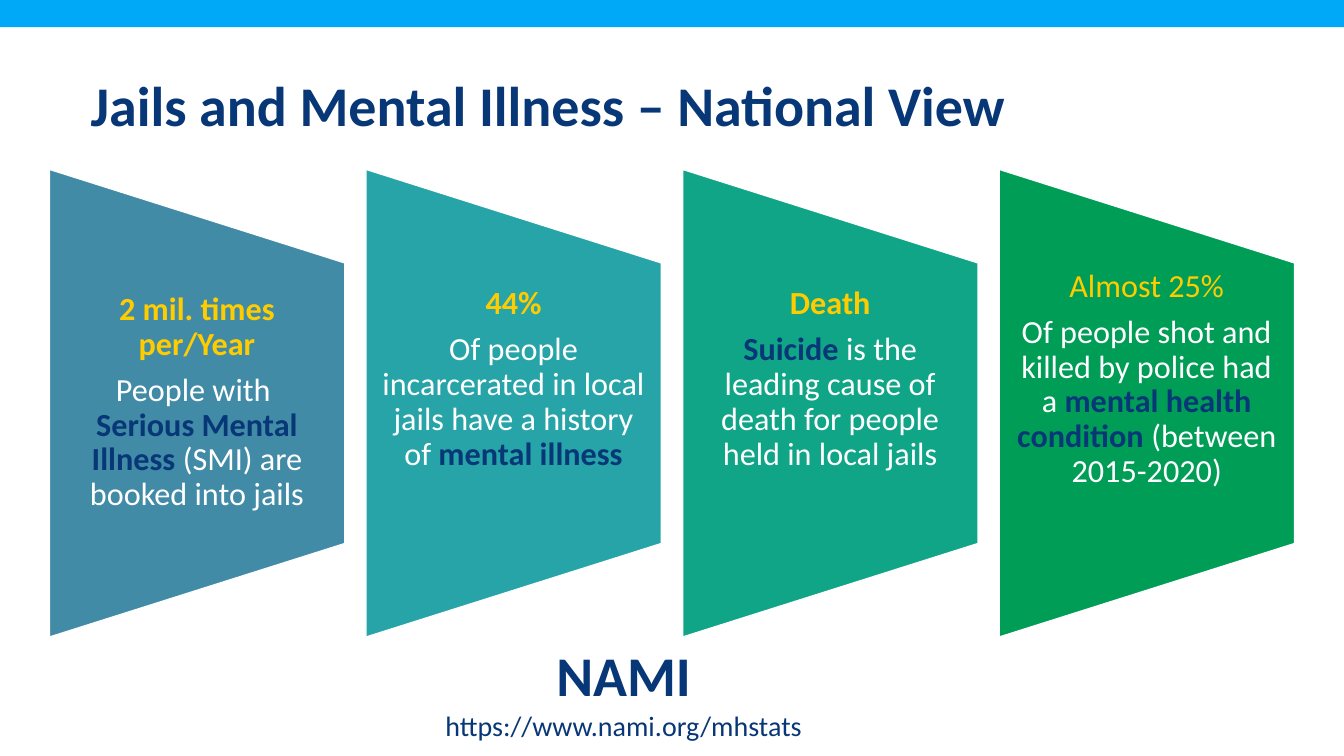
from pptx import Presentation
from pptx.dml.color import RGBColor
from pptx.enum.shapes import MSO_SHAPE as Shape
from pptx.enum.text import MSO_ANCHOR as Anchor, MSO_AUTO_SIZE as AutoSize, PP_ALIGN as Align
from pptx.util import Inches, Pt

NAVY, YELLOW, WHITE, SKY = "073776", "FFCC00", "FFFFFF", "00A9F8"
TITLE = "Jails and Mental Illness – National View"
SOURCE = [("NAMI", 40, True), ("https://www.nami.org/mhstats", 20, False)]

# Each panel: fill, heading, heading is bold, bottom inset, body as (text, emphasised);
# a newline stands for a line break
PANELS = [
    ("418BA7", "2 mil. times per/Year", True, 0,
     [("People with \n", False), ("Serious Mental Illness ", True),
      ("(SMI) are booked into jails", False)]),
    ("27A4A8", "44%", True, 0.46,
     [("Of people incarcerated in local jails have a history of ", False),
      ("mental illness", True)]),
    ("11A587", "Death", True, 0.46,
     [("Suicide", True),
      (" is the leading cause of death for people held in local jails", False)]),
    ("009D57", "Almost 25%", False, 0.46,
     [("Of people shot and killed by police had a ", False),
      ("mental health condition", True), (" (between 2015-2020)", False)]),
]

PANEL_LEFT, PANEL_WIDTH, PANEL_GAP = 0.49, 2.93, 0.21
PANEL_TOP, PANEL_HEIGHT = 1.68, 4.64
TEXT_TOP, TEXT_HEIGHT = 2.6, 2.79


def color(value):
    return RGBColor.from_string(value)


def set_font(font, size, hex_color, bold):
    font.name = "Calibri"
    font.size = Pt(size)
    font.bold = bold
    font.color.rgb = color(hex_color)


def panel_paragraph(paragraph):
    paragraph.alignment = Align.CENTER
    paragraph.line_spacing = 0.9
    paragraph.space_after = Pt(8)
    return paragraph


def add_panel(slide, left, fill, heading, heading_bold, bottom_inset, body):
    # The outline is drawn lying down and turned a quarter to the left
    shift = (PANEL_HEIGHT - PANEL_WIDTH) / 2
    shape = slide.shapes.add_shape(
        Shape.FLOWCHART_MANUAL_OPERATION, Inches(left - shift), Inches(PANEL_TOP + shift),
        Inches(PANEL_HEIGHT), Inches(PANEL_WIDTH))
    shape.rotation = 270
    shape.shadow.inherit = False
    shape.fill.solid()
    shape.fill.fore_color.rgb = color(fill)
    shape.line.color.rgb = color(WHITE)
    shape.line.width = Pt(1)

    # Upright text over the panel
    frame = slide.shapes.add_textbox(Inches(left), Inches(TEXT_TOP), Inches(PANEL_WIDTH),
                                     Inches(TEXT_HEIGHT)).text_frame
    frame.word_wrap = True
    frame.vertical_anchor = Anchor.MIDDLE
    frame.margin_left = frame.margin_right = Inches(0.16)
    frame.margin_top = 0
    frame.margin_bottom = Inches(bottom_inset)

    paragraph = panel_paragraph(frame.paragraphs[0])
    paragraph.text = heading
    set_font(paragraph.font, 23, YELLOW, heading_bold)

    paragraph = panel_paragraph(frame.add_paragraph())
    for text, emphasised in body:
        run = paragraph.add_run()
        run.text = text.rstrip("\n")
        set_font(run.font, 23, NAVY if emphasised else WHITE, emphasised)
        if text.endswith("\n"):
            paragraph.add_line_break()


def main():
    presentation = Presentation()
    presentation.slide_width, presentation.slide_height = Inches(13.33), Inches(7.5)
    slide = presentation.slides.add_slide(presentation.slide_layouts[5])

    # Top band
    band = slide.shapes.add_shape(Shape.RECTANGLE, 0, 0, presentation.slide_width, Inches(0.27))
    band.shadow.inherit = False
    band.fill.solid()
    band.fill.fore_color.rgb = color(SKY)
    band.line.fill.background()

    # Title
    title = slide.shapes.title
    title.left, title.top = Inches(0.8), Inches(0.28)
    title.width, title.height = Inches(10.78), Inches(1.15)
    frame = title.text_frame
    frame.text = TITLE
    frame.auto_size = AutoSize.NONE
    frame.vertical_anchor = Anchor.BOTTOM
    paragraph = frame.paragraphs[0]
    paragraph.alignment = Align.LEFT
    paragraph.line_spacing = 0.9
    set_font(paragraph.font, 40, NAVY, True)

    # Four panels
    for index, panel in enumerate(PANELS):
        add_panel(slide, PANEL_LEFT + index * (PANEL_WIDTH + PANEL_GAP), *panel)

    # Source
    frame = slide.shapes.add_textbox(Inches(4.08), Inches(6.31), Inches(4.21),
                                     Inches(1.11)).text_frame
    frame.word_wrap = True
    for index, (text, size, bold) in enumerate(SOURCE):
        paragraph = frame.add_paragraph() if index else frame.paragraphs[0]
        paragraph.text = text
        paragraph.alignment = Align.CENTER
        set_font(paragraph.font, size, NAVY, bold)

    presentation.save("out.pptx")


if __name__ == "__main__":
    main()
